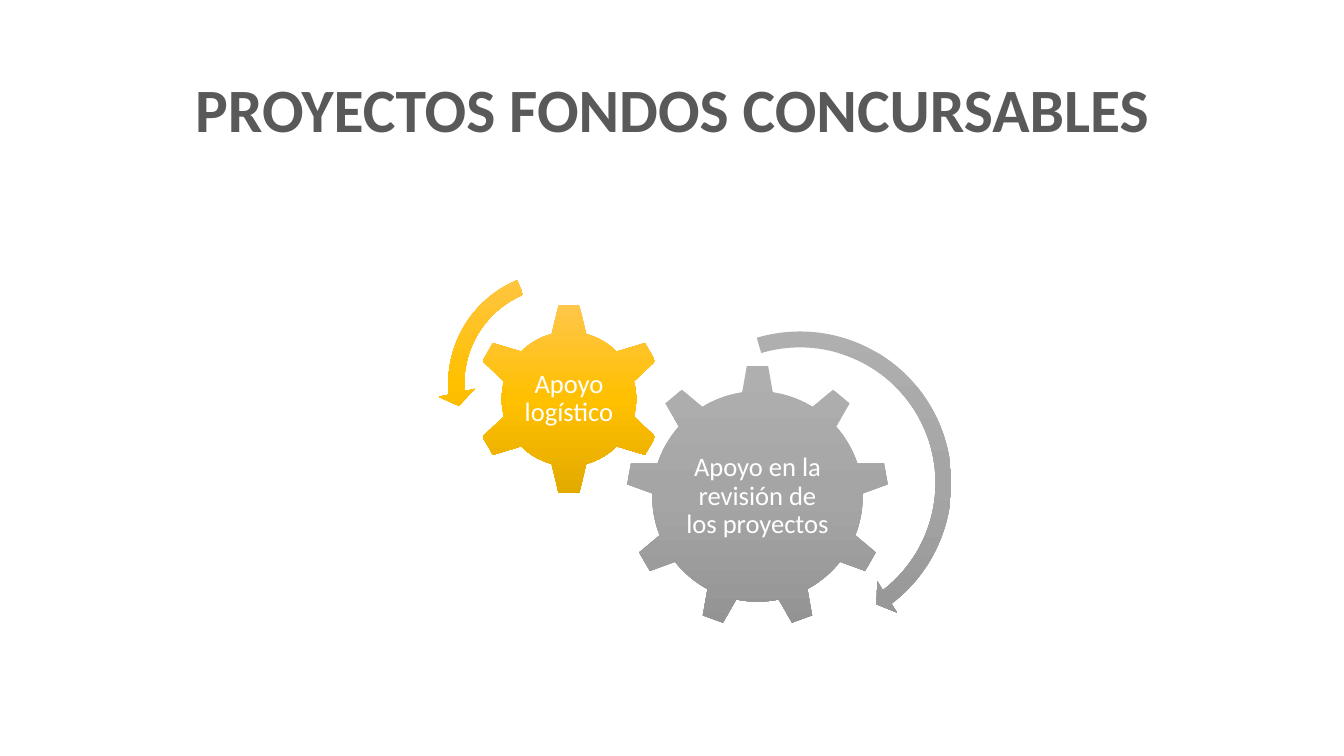
from copy import deepcopy

from pptx import Presentation
from pptx.dml.color import RGBColor
from pptx.enum.shapes import MSO_SHAPE
from pptx.enum.text import MSO_ANCHOR, PP_ALIGN
from pptx.util import Emu, Pt

GEAR_6, GEAR_9 = MSO_SHAPE.GEAR_6, MSO_SHAPE.GEAR_9
ARROW, LEFT_ARROW = MSO_SHAPE.CIRCULAR_ARROW, MSO_SHAPE.LEFT_CIRCULAR_ARROW
MIDDLE, CENTER = MSO_ANCHOR.MIDDLE, PP_ALIGN.CENTER

FONT = "Calibri"
DARK = RGBColor(0x59, 0x59, 0x59)
WHITE = RGBColor(0xFF, 0xFF, 0xFF)
GREYS = (RGBColor(0xAF, 0xAF, 0xAF), RGBColor(0xA5, 0xA5, 0xA5), RGBColor(0x93, 0x93, 0x93))
YELLOWS = (RGBColor(0xFF, 0xC6, 0x4B), RGBColor(0xFF, 0xC0, 0x00), RGBColor(0xE3, 0xAA, 0x00))


def px(n):
    return Emu(round(n * 914400 / 100.8))


def add_text(slide, box, text, size, color, bold=False, inset=None):
    tf = slide.shapes.add_textbox(*map(px, box)).text_frame
    tf.word_wrap = True
    tf.vertical_anchor = MIDDLE
    if inset is not None:
        tf.margin_left = tf.margin_right = tf.margin_top = tf.margin_bottom = px(inset)
    p = tf.paragraphs[0]
    p.alignment = CENTER
    p.line_spacing = 0.9
    r = p.add_run()
    r.text = text
    r.font.name, r.font.size, r.font.bold = FONT, Pt(size), bold
    r.font.color.rgb = color


def add_graded(slide, kind, left, top, size, colors, adjustments=()):
    """Square preset shape with a three-stop gradient running downwards."""
    s = slide.shapes.add_shape(kind, px(left), px(top), px(size), px(size))
    s.shadow.inherit = False
    s.line.fill.background()
    for i, value in enumerate(adjustments):
        s.adjustments[i] = value
    s.fill.gradient()
    s.fill.gradient_angle = 270
    first = s._element.spPr.xpath("./a:gradFill/a:gsLst/a:gs")[0]
    first.addnext(deepcopy(first))
    for stop, position, color in zip(s.fill.gradient_stops, (0, 0.5, 1), colors):
        stop.position = position
        stop.color.rgb = color


def add_gear(slide, box, kind, colors, text, text_size):
    """Gear filling a square box, with its label centred inside."""
    left, top, size = box
    add_graded(slide, kind, left, top, size, colors)
    w, h = text_size
    label = (left + (size - w) / 2, top + (size - h) / 2, w, h)
    add_text(slide, label, text, 19, WHITE, inset=3)


def add_gears(slide, box):
    left, top = box
    # Gears
    add_gear(slide, (left + 188, top + 104, 263), GEAR_9, GREYS,
             "Apoyo en la revisión de los proyectos", (157, 135))
    add_gear(slide, (left + 35, top + 42, 192), GEAR_6, YELLOWS,
             "Apoyo logístico", (95, 95))
    # Turning arrows
    add_graded(slide, ARROW, left + 200, top + 60, 324, GREYS,
               (0.049, 3.126, 31.545, 152.053, 0.057))
    add_graded(slide, LEFT_ARROW, left, top, 245, YELLOWS,
               (0.065, 4.3, 104.891, 148.378, 0.075))


def main():
    prs = Presentation()
    prs.slide_width, prs.slide_height = px(1344), px(756)
    slide = prs.slides.add_slide(prs.slide_layouts[6])
    # Title
    add_text(slide, (93, 40, 1159, 146), "PROYECTOS FONDOS CONCURSABLES", 44, DARK, bold=True)
    # Gear diagram
    add_gears(slide, (438, 261))
    prs.save("out.pptx")


if __name__ == "__main__":
    main()
